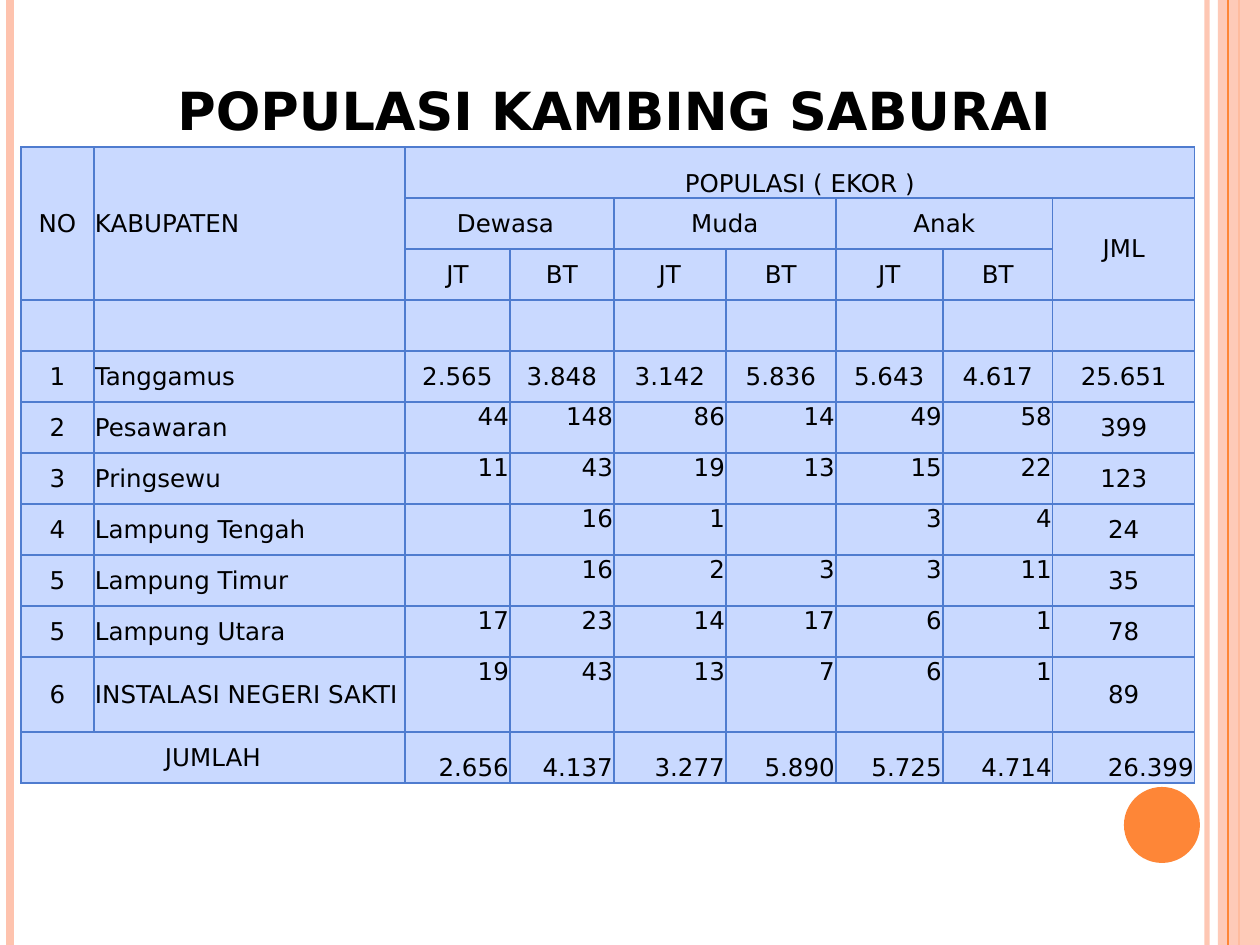
from lxml.etree import SubElement
from pptx import Presentation
from pptx.dml.color import RGBColor
from pptx.enum.shapes import MSO_CONNECTOR, MSO_SHAPE
from pptx.enum.text import MSO_ANCHOR, PP_ALIGN
from pptx.oxml.ns import qn
from pptx.util import Pt

PX = 914400 / 126
WIDTH, HEIGHT = 1260, 945
FONT = "DejaVu Sans"
COLORS = {
    "peach": "FEC3AE",
    "orange": "FE8637",
    "cell": "C9D9FF",
    "border": "4F7CCF",
    "text": "000000",
}
LEFT, CENTER, RIGHT = PP_ALIGN.LEFT, PP_ALIGN.CENTER, PP_ALIGN.RIGHT
TOP, MIDDLE, BOTTOM = MSO_ANCHOR.TOP, MSO_ANCHOR.MIDDLE, MSO_ANCHOR.BOTTOM
STRAIGHT = MSO_CONNECTOR.STRAIGHT
RECTANGLE, OVAL = MSO_SHAPE.RECTANGLE, MSO_SHAPE.OVAL

COLUMN_WIDTHS = [73, 311, 105, 104, 112, 110, 107, 110, 142]
ROW_HEIGHTS = [51] * 10 + [75, 51]
HEADINGS = [
    (0, 0, 3, 1, "NO", CENTER, MIDDLE),
    (0, 1, 3, 1, "KABUPATEN", LEFT, MIDDLE),
    (0, 2, 1, 7, "POPULASI ( EKOR )", CENTER, BOTTOM),
    (1, 2, 1, 2, "Dewasa ", CENTER, MIDDLE),
    (1, 4, 1, 2, "Muda", CENTER, MIDDLE),
    (1, 6, 1, 2, "Anak", CENTER, MIDDLE),
    (1, 8, 2, 1, "JML", CENTER, MIDDLE),
    (11, 0, 1, 2, "JUMLAH", CENTER, MIDDLE),
]
DISTRICTS = [
    ["1", "Tanggamus", "2.565", "3.848", "3.142", "5.836", "5.643", "4.617", "25.651"],
    ["2", "Pesawaran", "44", "148", "86", "14", "49", "58", "399"],
    ["3", "Pringsewu", "11", "43", "19", "13", "15", "22", "123"],
    ["4", "Lampung Tengah", "", "16", "1", "", "3", "4", "24"],
    ["5", "Lampung Timur", "", "16", "2", "3", "3", "11", "35"],
    ["5", "Lampung Utara", "17", "23", "14", "17", "6", "1", "78"],
    ["6", "INSTALASI NEGERI SAKTI", "19", "43", "13", "7", "6", "1", "89"],
]
TOTALS = ["2.656", "4.137", "3.277", "5.890", "5.725", "4.714", "26.399"]


def px(length):
    return round(length * PX)


def rgb(name):
    return RGBColor.from_string(COLORS[name])


def set_alpha(properties, percent):
    color = next(properties.iter(qn("a:srgbClr")))
    SubElement(color, qn("a:alpha"), val=str(percent * 1000))


def write(frame, text, size=14, bold=False, align=LEFT):
    paragraph = frame.paragraphs[0]
    paragraph.alignment = align
    run = paragraph.add_run()
    run.text = text
    run.font.name = FONT
    run.font.size = Pt(size)
    run.font.bold = bold
    run.font.color.rgb = rgb("text")


def add_stripe(slide, x, color, weight, alpha=100):
    stripe = slide.shapes.add_connector(STRAIGHT, px(x), 0, px(x), px(HEIGHT))
    stripe.line.color.rgb = rgb(color)
    stripe.line.width = Pt(weight)
    properties = stripe._element.spPr
    SubElement(properties, qn("a:effectLst"))
    if alpha < 100:
        set_alpha(properties, alpha)


def add_block(slide, kind, box, color, alpha=100):
    block = slide.shapes.add_shape(kind, *map(px, box))
    block.shadow.inherit = False
    block.fill.solid()
    block.fill.fore_color.rgb = rgb(color)
    block.line.fill.background()
    if alpha < 100:
        set_alpha(block._element.spPr, alpha)


def add_frame(slide):
    add_stripe(slide, 1207, "peach", 3, alpha=93)
    add_stripe(slide, 10, "peach", 4.5)
    add_stripe(slide, 1239, "orange", 1.5)
    add_block(slide, RECTANGLE, (1218, 0, 42, HEIGHT), "peach", alpha=87)
    add_stripe(slide, 1228, "orange", 0.75)
    add_block(slide, OVAL, (1124, 787, 76, 76), "orange")


def add_title(slide, left, top, width, height):
    title = slide.shapes.add_textbox(px(left), px(top), px(width), px(height))
    title.text_frame.word_wrap = True
    title.text_frame.vertical_anchor = BOTTOM
    write(title.text_frame, "POPULASI KAMBING SABURAI", size=30, bold=True, align=CENTER)


def style_cell(cell):
    cell.margin_left = cell.margin_right = cell.margin_top = px(1)
    cell.margin_bottom = 0
    properties = cell._tc.get_or_add_tcPr()
    for side in ("lnL", "lnR", "lnT", "lnB"):
        border = SubElement(properties, qn(f"a:{side}"), w=str(Pt(1)))
        fill = SubElement(border, qn("a:solidFill"))
        SubElement(fill, qn("a:srgbClr"), val=COLORS["border"])
    cell.fill.solid()
    cell.fill.fore_color.rgb = rgb("cell")


def fill_cell(cell, text, align, anchor):
    cell.vertical_anchor = anchor
    if text:
        write(cell.text_frame, text, align=align)


def add_population_table(slide, left, top):
    table = slide.shapes.add_table(
        len(ROW_HEIGHTS), len(COLUMN_WIDTHS), px(left), px(top),
        px(sum(COLUMN_WIDTHS)), px(sum(ROW_HEIGHTS)),
    ).table
    table.first_row = table.horz_banding = False
    for column, width in zip(table.columns, COLUMN_WIDTHS):
        column.width = px(width)
    for row, height in zip(table.rows, ROW_HEIGHTS):
        row.height = px(height)
    for cell in table.iter_cells():
        style_cell(cell)

    for row, column, rows, columns, text, align, anchor in HEADINGS:
        heading = table.cell(row, column)
        heading.merge(table.cell(row + rows - 1, column + columns - 1))
        fill_cell(heading, text, align, anchor)
    for column, sex in enumerate(["JT", "BT"] * 3, 2):
        fill_cell(table.cell(2, column), sex, CENTER, MIDDLE)
    for row, district in enumerate(DISTRICTS, 4):
        for column, text in enumerate(district):
            align, anchor = CENTER, MIDDLE
            if column == 1:
                align = LEFT
            elif 2 <= column <= 7 and row > 4:
                align, anchor = RIGHT, TOP
            fill_cell(table.cell(row, column), text, align, anchor)
    for column, total in enumerate(TOTALS, 2):
        fill_cell(table.cell(11, column), total, RIGHT, BOTTOM)


def main():
    presentation = Presentation()
    presentation.slide_width = px(WIDTH)
    presentation.slide_height = px(HEIGHT)
    slide = presentation.slides.add_slide(presentation.slide_layouts[6])
    add_frame(slide)
    add_population_table(slide, 21, 147)
    add_title(slide, 21, 38, 1187, 109)
    presentation.save("out.pptx")


if __name__ == "__main__":
    main()
